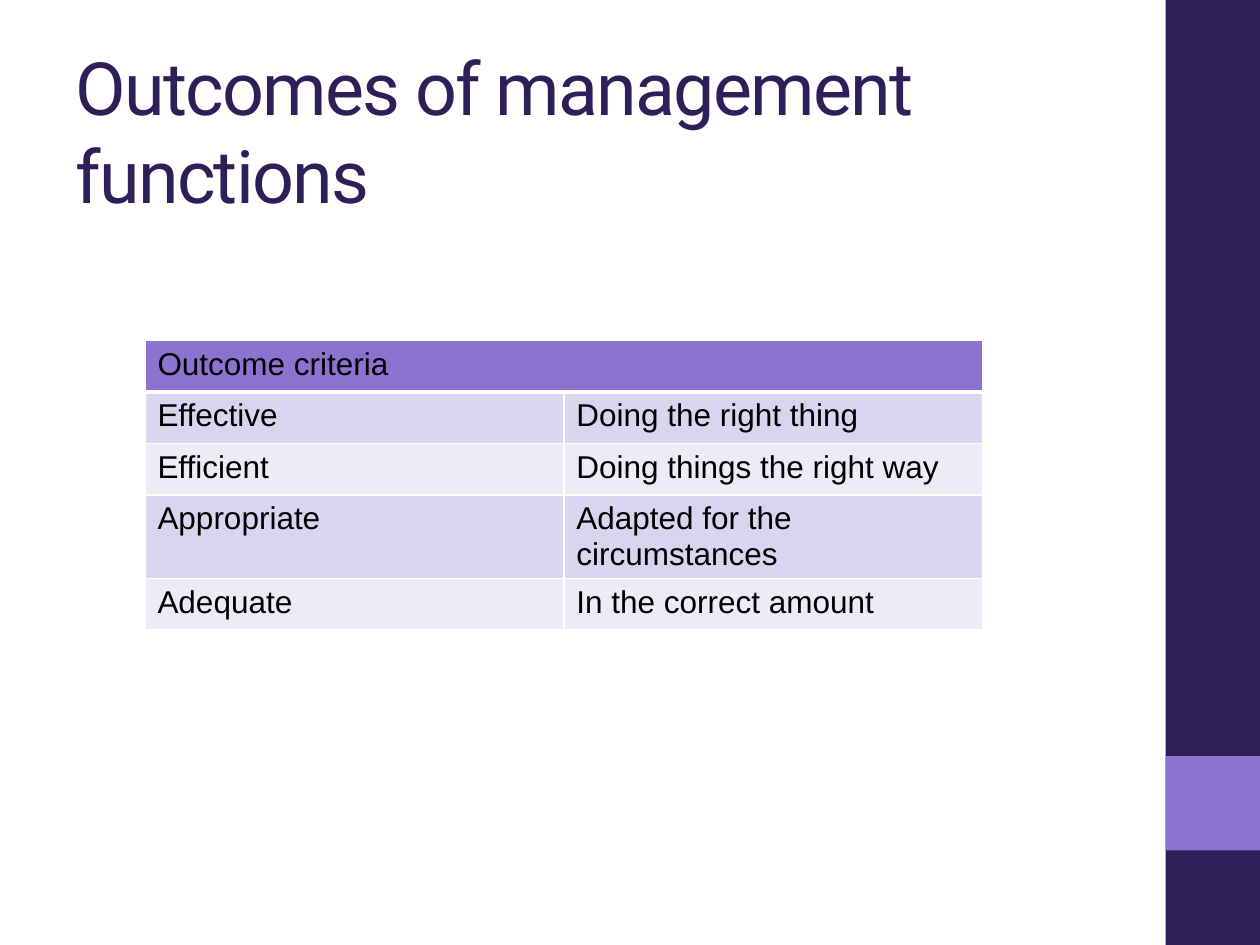
"""Build a slide with a table of the outcomes of management functions."""
from dataclasses import dataclass

from lxml import etree
from pptx import Presentation, slide, util as u
from pptx.dml.color import RGBColor
from pptx.enum import shapes, text
from pptx.oxml.ns import qn

INDIGO = RGBColor(0x2F, 0x1F, 0x58)
VIOLET = RGBColor(0x8C, 0x73, 0xD0)
LILAC = RGBColor(0xDA, 0xD5, 0xEE)
MIST = RGBColor(0xEE, 0xEB, 0xF7)
WHITE = RGBColor(0xFF, 0xFF, 0xFF)
BLACK = RGBColor(0, 0, 0)

CRITERIA = [
    ("Outcome criteria", ""),
    ("Effective", "Doing the right thing"),
    ("Efficient", "Doing things the right way"),
    ("Appropriate", "Adapted for the circumstances"),
    ("Adequate", "In the correct amount"),
]


@dataclass
class Painter:
    page: slide.Slide
    title_font: str = "Roboto"
    title_size: int = 42
    body_font: str = "Arial"
    body_size: int = 18

    def band(self, left, top, width, height, color):
        box = self.page.shapes.add_shape(
            shapes.MSO_SHAPE.RECTANGLE, *map(u.Inches, (left, top, width, height)))
        box.shadow.inherit = False
        box.fill.solid()
        box.fill.fore_color.rgb = color
        box.line.fill.background()

    def title(self, wording, left, top, width, height):
        box = self.page.shapes.title
        box.left, box.top, box.width, box.height = map(
            u.Inches, (left, top, width, height))
        frame = box.text_frame
        frame.text = wording
        frame.word_wrap = True
        frame.auto_size = text.MSO_AUTO_SIZE.NONE
        frame.vertical_anchor = text.MSO_ANCHOR.MIDDLE
        para = frame.paragraphs[0]
        para.alignment = text.PP_ALIGN.LEFT
        self.style(para, self.title_font, self.title_size, INDIGO)
        para.runs[0].font._element.set("spc", "-100")

    def style(self, para, name, size, color):
        para.font.name = name
        para.font.size = u.Pt(size)
        para.font.bold = False
        para.font.color.rgb = color

    def borders(self, cell, top, bottom):
        properties = cell._tc.get_or_add_tcPr()
        for side, points in zip("LRTB", (1, 1, top, bottom)):
            line = etree.SubElement(
                properties, qn(f"a:ln{side}"), w=str(u.Pt(points)))
            fill = etree.SubElement(line, qn("a:solidFill"))
            etree.SubElement(fill, qn("a:srgbClr"), val=str(WHITE))

    def table(self, rows, left, top, width, row_height):
        grid = self.page.shapes.add_table(
            len(rows), len(rows[0]), u.Inches(left), u.Inches(top),
            u.Inches(width), u.Inches(row_height * len(rows))).table
        for r, row in enumerate(rows):
            grid.rows[r].height = u.Inches(row_height)
            color = VIOLET if r == 0 else LILAC if r % 2 else MIST
            for c, wording in enumerate(row):
                cell = grid.cell(r, c)
                self.borders(cell, 3 if r == 1 else 1, 3 if r == 0 else 1)
                cell.fill.solid()
                cell.fill.fore_color.rgb = color
                cell.text = wording
                self.style(cell.text_frame.paragraphs[0],
                           self.body_font, self.body_size, BLACK)
        grid.cell(0, 0).merge(grid.cell(0, len(rows[0]) - 1))


def main():
    deck = Presentation()
    deck.slide_width, deck.slide_height = u.Inches(10), u.Inches(7.5)
    painter = Painter(deck.slides.add_slide(deck.slide_layouts[5]))
    painter.band(9.25, 0, 0.75, 7.5, INDIGO)
    painter.band(9.25, 6, 0.75, 0.75, VIOLET)
    painter.table(CRITERIA, 1.15, 2.7, 6.65, 0.41)
    painter.title("Outcomes of management functions", 0.5, 0.3, 8.33, 1.47)
    deck.save("out.pptx")


if __name__ == "__main__":
    main()
